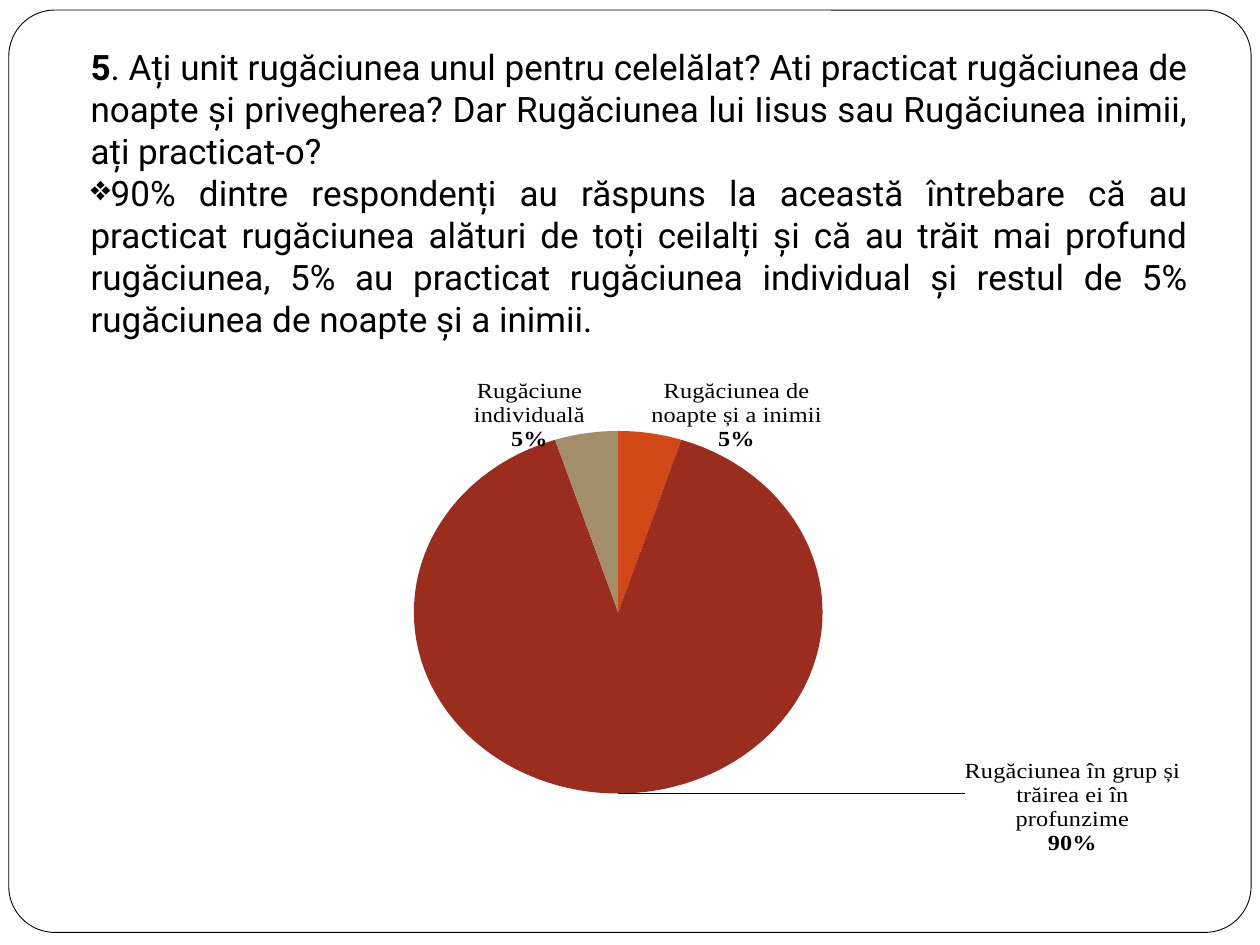
import dataclasses

import lxml.etree
import pptx
import pptx.chart.data
import pptx.dml.color
import pptx.enum.chart
import pptx.enum.shapes
import pptx.enum.text
import pptx.oxml
import pptx.oxml.ns
import pptx.util

Inches = pptx.util.Inches
Pt = pptx.util.Pt
qn = pptx.oxml.ns.qn


@dataclasses.dataclass(frozen=True)
class Theme:
    ink: str = "000000"
    paper: str = "FFFFFF"
    slices: tuple = ("D34817", "9B2D1F", "A28E6A")
    body_font: str = "Roboto"
    chart_font: str = "Times New Roman"
    body_size: int = 20
    chart_size: int = 10
    label_size: int = 14


THEME = Theme()

QUESTION = (
    ". Ați unit rugăciunea unul pentru celelălat? Ati practicat rugăciunea de "
    "noapte și privegherea? Dar Rugăciunea lui Iisus sau Rugăciunea inimii, "
    "ați practicat-o? "
)
ANSWER = (
    "90% dintre respondenți au răspuns la această întrebare că au practicat "
    "rugăciunea alături de toți ceilalți și că au trăit mai profund rugăciunea, "
    "5% au practicat rugăciunea individual și restul de 5% rugăciunea de noapte "
    "și a inimii."
)
CATEGORIES = (
    "Rugăciunea de noapte și a inimii",
    "Rugăciune în grup și trăirea mai profundă a ei",
    "Rugăciune individuală",
)
SHARES = (5, 90, 5)
# Label text and its shift from the default place, as fractions of the chart
LABELS = (
    ("Rugăciunea de noapte și a inimii", 0, 0.04),
    ("Rugăciunea în grup și trăirea ei în profunzime", 0.42, -0.08),
    ("Rugăciune individuală", 0, 0.04),
)


def rgb(value):
    return pptx.dml.color.RGBColor.from_string(value)


def add_span(para, text, *, size, font, color=THEME.ink, bold=False):
    span = para.add_run()
    span.text = text
    span.font.size = Pt(size)
    span.font.name = font
    span.font.bold = bold
    span.font.color.rgb = rgb(color)


def add_frame(page):
    frame = page.shapes.add_shape(
        pptx.enum.shapes.MSO_SHAPE.ROUNDED_RECTANGLE,
        Inches(0.07), Inches(0.08), Inches(9.86), Inches(7.32),
    )
    frame.adjustments[0] = 0.05
    frame.shadow.inherit = False
    frame.fill.solid()
    frame.fill.fore_color.rgb = rgb(THEME.paper)
    frame.line.color.rgb = rgb(THEME.ink)
    frame.line.width = Pt(0.5)


def set_bullet(para, mark):
    bullet = lxml.etree.SubElement(para._p.get_or_add_pPr(), qn("a:buChar"))
    bullet.set("char", mark)


def add_question(page):
    box = page.shapes.add_textbox(
        Inches(0.62), Inches(0.31), Inches(8.91), Inches(3.13)
    )
    frame = box.text_frame
    frame.word_wrap = True
    style = {"size": THEME.body_size, "font": THEME.body_font}
    question, answer = frame.paragraphs[0], frame.add_paragraph()
    for para in (question, answer):
        para.alignment = pptx.enum.text.PP_ALIGN.JUSTIFY
    add_span(question, "5", bold=True, **style)
    add_span(question, QUESTION, **style)
    set_bullet(answer, "❖")
    add_span(answer, ANSWER, **style)


def manual_layout(**values):
    layout = pptx.oxml.parse_xml(
        '<c:layout xmlns:c="http://schemas.openxmlformats.org/drawingml/2006/chart">'
        "<c:manualLayout/></c:layout>"
    )
    for name, value in values.items():
        lxml.etree.SubElement(layout[0], qn(f"c:{name}")).set("val", str(value))
    return layout


def label_slice(point, text, share, shift_x, shift_y):
    label = point.data_label
    frame = label.text_frame
    style = {"size": THEME.label_size, "font": THEME.chart_font}
    add_span(frame.paragraphs[0], text, **style)
    add_span(frame.add_paragraph(), f"{share}%", bold=True, **style)
    label.position = pptx.enum.chart.XL_LABEL_POSITION.OUTSIDE_END
    index = label._dLbl.find(qn("c:idx"))
    index.addnext(manual_layout(x=shift_x, y=shift_y))


def add_pie(page):
    data = pptx.chart.data.CategoryChartData()
    data.categories = CATEGORIES
    data.add_series("Series 1", SHARES)
    chart = page.shapes.add_chart(
        pptx.enum.chart.XL_CHART_TYPE.PIE,
        Inches(0.7), Inches(2.81), Inches(8.67), Inches(4.31), data,
    ).chart
    chart.has_title = False
    chart.has_legend = False
    chart.font.name = THEME.chart_font
    chart.font.size = Pt(THEME.chart_size)
    chart.font.color.rgb = rgb(THEME.ink)

    plot = chart.plots[0]
    plot.vary_by_categories = True
    labels = plot.series[0].data_labels
    labels.show_percentage = True
    labels.show_category_name = True
    labels.show_value = False
    labels.font.size = Pt(THEME.label_size)
    lxml.etree.SubElement(labels._element, qn("c:showLeaderLines")).set("val", "1")
    for index, (color, share, label) in enumerate(zip(THEME.slices, SHARES, LABELS)):
        point = plot.series[0].points[index]
        point.format.fill.solid()
        point.format.fill.fore_color.rgb = rgb(color)
        text, shift_x, shift_y = label
        label_slice(point, text, share, shift_x, shift_y)

    area = chart._chartSpace.chart.plotArea
    for old in area.findall(qn("c:layout")):
        area.remove(old)
    area.insert(0, manual_layout(
        layoutTarget="inner", xMode="edge", yMode="edge",
        x=0.09, y=0.11, w=0.8, h=0.76,
    ))


def main():
    deck = pptx.Presentation()
    deck.slide_width, deck.slide_height = Inches(10), Inches(7.5)
    page = deck.slides.add_slide(deck.slide_layouts[6])
    page.background.fill.solid()
    page.background.fill.fore_color.rgb = rgb(THEME.paper)
    add_frame(page)
    add_question(page)
    add_pie(page)
    deck.save("out.pptx")


if __name__ == "__main__":
    main()
